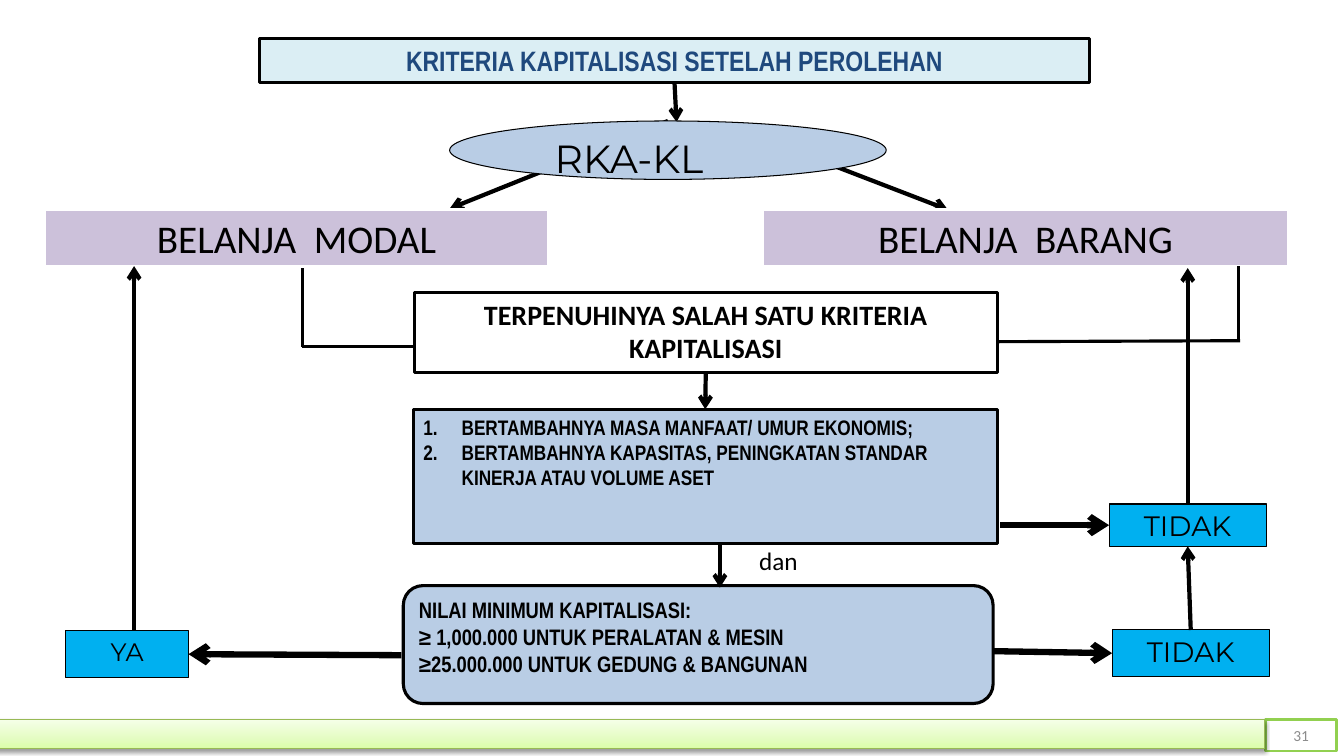
from lxml import etree
from pptx import Presentation
from pptx.dml.color import RGBColor
from pptx.enum.shapes import MSO_CONNECTOR as CONN, MSO_SHAPE as SHAPE
from pptx.enum.text import MSO_ANCHOR as ANCHOR, PP_ALIGN as ALIGN
from pptx.oxml import parse_xml
from pptx.oxml.ns import nsdecls, qn
from pptx.util import Inches, Pt

BLACK, WHITE, BLUE, CYAN, LILAC = "000000", "FFFFFF", "B9CDE5", "00B0F0", "CCC1DA"
TOP, LEFT, BOTTOM, RIGHT = range(4)


def rgb(value):
    """Turn a hex string into a colour."""
    return RGBColor.from_string(value)


def write(sp, lines, font, size, color=BLACK, bold=False, align=ALIGN.CENTER, anchor=ANCHOR.TOP):
    """Write one paragraph per line and return the paragraphs."""
    tf = sp.text_frame
    tf.word_wrap, tf.vertical_anchor = True, anchor
    for i, line in enumerate(lines):
        p = tf.paragraphs[0] if i == 0 else tf.add_paragraph()
        p.alignment = align
        r = p.add_run()
        r.text = line
        for key, value in {"name": font, "size": Pt(size), "bold": bold}.items():
            setattr(r.font, key, value)
        r.font.color.rgb = rgb(color)
    return tf.paragraphs


def indent(p, left, first=0):
    """Set the left and first-line indents of a paragraph."""
    pPr = p._p.get_or_add_pPr()
    pPr.set("marL", str(Inches(left)))
    pPr.set("indent", str(Inches(first)))
    return pPr


def block(s, box, fill=None, line=BLACK, width=2.25, kind=SHAPE.RECTANGLE):
    """Add a filled and outlined shape."""
    sp = s.shapes.add_shape(kind, *map(Inches, box))
    sp.shadow.inherit = False
    if fill:
        sp.fill.solid()
        sp.fill.fore_color.rgb = rgb(fill)
    else:
        sp.fill.background()
    sp.line.color.rgb = rgb(line)
    sp.line.width = Pt(width)
    return sp


def link(s, start, end, width=3, arrow=True, begin_at=None, end_at=None):
    """Draw a straight line, joined to a (shape, side) pair where given."""
    cx = s.shapes.add_connector(CONN.STRAIGHT, *map(Inches, start + end))
    cx.line.color.rgb = rgb(BLACK)
    cx.line.width = Pt(width)
    if begin_at:
        cx.begin_connect(*begin_at)
    if end_at:
        cx.end_connect(*end_at)
    if arrow:
        etree.SubElement(cx.line._get_or_add_ln(), qn("a:tailEnd"), type="arrow")
    etree.SubElement(cx._element.spPr, qn("a:effectLst"))
    return cx


def header(s, x, y, w, h):
    """Place the title bar, the budget ellipse and its two branches."""
    title = block(s, (x, y, w, 0.44), "DBEEF4")
    write(title, ["KRITERIA KAPITALISASI SETELAH PEROLEHAN"], "Arial Narrow", 20, "1F497D", True)
    link(s, (x + 4.12, y + 0.44), (x + 4.14, y + 0.83), begin_at=(title, BOTTOM))
    budget = block(s, (x + 1.89, y + 0.82, 4.33, h - 0.82), BLUE, width=0.75, kind=SHAPE.OVAL)
    indent(write(budget, ["RKA-KL"], "Montserrat", 28, align=ALIGN.LEFT)[0], 0.31)
    branches = [
        link(s, (x + 4.06, y + 0.82), (x + 1.89, y + 1.69), begin_at=(budget, TOP)),
        link(s, (x + 4.83, y + 0.93), (x + 6.83, y + 1.7)),
    ]
    for cx in branches:
        s.shapes._spTree.insert(2, cx._element)


def spending(s, box, name):
    """Place one kind of spending."""
    sp = block(s, box, LILAC, WHITE, 2.5)
    write(sp, [name], "Calibri", 28)


def criteria(s, x, y, w, h):
    """Stack the criteria heading, the numbered list and the minimum values."""
    head = block(s, (x + 0.11, y, w - 0.11, 0.8), width=2)
    write(head, ["TERPENUHINYA SALAH SATU KRITERIA KAPITALISASI"], "Calibri", 20, bold=True)

    rules = block(s, (x + 0.1, y + 1.16, w - 0.1, 1.33), BLUE)
    items = [
        "BERTAMBAHNYA MASA MANFAAT/ UMUR EKONOMIS;",
        "BERTAMBAHNYA KAPASITAS, PENINGKATAN STANDAR KINERJA ATAU VOLUME ASET",
    ]
    for p in write(rules, items, "Arial Narrow", 15, bold=True, align=ALIGN.LEFT):
        etree.SubElement(indent(p, 0.38, -0.38), qn("a:buAutoNum"), type="arabicPeriod")

    minimum = block(s, (x, y + h - 1.17, w - 0.04, 1.17), BLUE, kind=SHAPE.ROUNDED_RECTANGLE)
    values = [
        "NILAI MINIMUM KAPITALISASI:",
        "≥ 1,000.000 UNTUK PERALATAN & MESIN",
        "≥25.000.000 UNTUK GEDUNG & BANGUNAN",
    ]
    write(minimum, values, "Arial Narrow", 16, bold=True, align=ALIGN.LEFT)

    link(s, (x + 3, y + 0.8), (x + 3, y + 1.16), begin_at=(head, BOTTOM), end_at=(rules, TOP))
    link(s, (x + 3.14, y + 2.5), (x + 3.14, y + 2.93))
    joint = s.shapes.add_textbox(*map(Inches, (x + 3.11, y + 2.5, 1.22, 0.33)))
    write(joint, ["dan"], "Calibri", 18, anchor=ANCHOR.MIDDLE)


def decision(s, box, answer, size=20):
    """Place one answer box."""
    sp = block(s, box, CYAN, width=0.75)
    write(sp, [answer], "Montserrat", size)
    return sp


def routes(s, yes, no_rules, no_minimum):
    """Draw the lines between the regions."""
    for start, end in [
        ((3, 2.66), (3, 3.44)),
        ((3, 3.44), (4.1, 3.44)),
        ((9.9, 3.39), (12.3, 3.38)),
        ((12.28, 2.64), (12.28, 3.38)),
    ]:
        link(s, start, end, 2.25, arrow=False)
    link(s, (1.33, 6.26), (1.33, 2.64))
    link(s, (11.78, 5), (11.78, 2.66), begin_at=(no_rules, TOP))
    link(s, (11.81, 6.25), (11.78, 5.42), begin_at=(no_minimum, TOP), end_at=(no_rules, BOTTOM))
    for start, end, target in [
        ((3.98, 6.5), (1.87, 6.49), (yes, RIGHT)),
        ((9.85, 6.46), (11.03, 6.48), (no_minimum, LEFT)),
        ((9.92, 5.21), (11, 5.21), (no_rules, LEFT)),
    ]:
        link(s, start, end, 4.5, end_at=target)


def footer(s, x, y, w, h):
    """Place the page number and the shaded bar."""
    number = block(s, (x + w - 0.71, y, 0.71, h), WHITE, "92D050", 2)
    write(number, ["31"], "Calibri", 11, "8C8C8C", anchor=ANCHOR.MIDDLE)
    bar = block(s, (x, y, w - 0.72, h - 0.02), WHITE, "98B955", 0.75)
    stops = "".join(
        f'<a:gs pos="{pos * 1000}"><a:srgbClr val="{color}"/></a:gs>'
        for pos, color in [(0, "DAFDA7"), (35, "E4FCC2"), (100, "F5FFE7")]
    )
    spPr = bar._element.spPr
    spPr.replace(spPr.find(qn("a:solidFill")), parse_xml(
        f'<a:gradFill {nsdecls("a")} rotWithShape="1"><a:gsLst>{stops}</a:gsLst>'
        '<a:lin ang="16200000" scaled="0"/></a:gradFill>'))
    spPr.find(qn("a:effectLst")).append(parse_xml(
        f'<a:outerShdw {nsdecls("a")} blurRad="{Pt(3.1)}" dist="{Pt(1.6)}" dir="5400000" '
        'rotWithShape="0"><a:srgbClr val="000000"><a:alpha val="38000"/></a:srgbClr></a:outerShdw>'))


def main():
    """Build and save the slide."""
    prs = Presentation()
    prs.slide_width, prs.slide_height = Inches(13.33), Inches(7.5)
    s = prs.slides.add_slide(prs.slide_layouts[6])
    header(s, 2.57, 0.38, 8.24, 1.4)
    spending(s, (0.44, 2.08, 5, 0.57), "BELANJA  MODAL")
    spending(s, (7.56, 2.08, 5.22, 0.57), "BELANJA  BARANG")
    criteria(s, 4, 2.9, 5.89, 4.08)
    yes = decision(s, (0.65, 6.26, 1.22, 0.46), "YA", 18)
    no_rules = decision(s, (11, 5, 1.56, 0.42), "TIDAK")
    no_minimum = decision(s, (11.03, 6.25, 1.56, 0.46), "TIDAK")
    routes(s, yes, no_rules, no_minimum)
    footer(s, -0.05, 7.14, 13.31, 0.31)
    prs.save("out.pptx")


if __name__ == "__main__":
    main()
